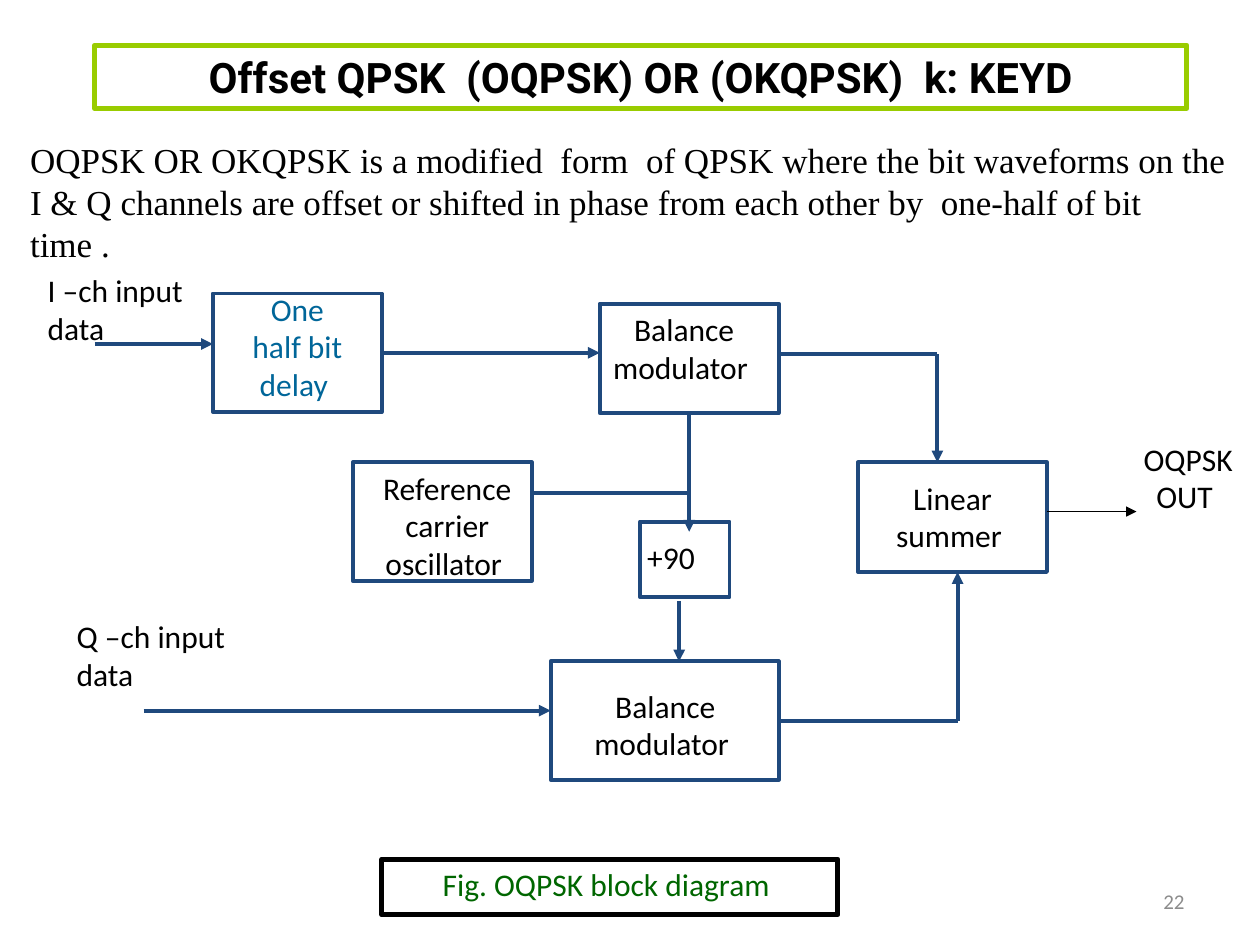
from dataclasses import dataclass

from lxml.etree import SubElement
from pptx import Presentation
from pptx.dml.color import RGBColor
from pptx.enum.shapes import MSO_CONNECTOR, MSO_SHAPE
from pptx.enum.text import MSO_ANCHOR, MSO_AUTO_SIZE, PP_ALIGN
from pptx.oxml.ns import qn
from pptx.util import Inches, Pt

COLOURS = {
    "navy": "1F497D", "white": "FFFFFF", "black": "000000", "lime": "99CC00",
    "teal": "006699", "green": "006600", "grey": "8C8C8C",
}
TOP, LEFT, BOTTOM, RIGHT = range(4)


def colour(name):
    return RGBColor.from_string(COLOURS[name])


@dataclass
class DiagramPage:
    """Draws the boxes, wires and labels of a block diagram on one slide."""

    page: object
    font: str = "Calibri"
    size: float = 18
    weight: float = 2.25

    def set_text(self, shape, text, ink="black", size=None, font=None, bold=False,
                 align=PP_ALIGN.CENTER, anchor=MSO_ANCHOR.TOP, grow=True):
        frame = shape.text_frame
        frame.word_wrap = True
        frame.vertical_anchor = anchor
        frame.auto_size = MSO_AUTO_SIZE.SHAPE_TO_FIT_TEXT if grow else MSO_AUTO_SIZE.NONE
        para = frame.paragraphs[0]
        para.text = text
        para.alignment = align
        para.font.name = font or self.font
        para.font.size = Pt(size or self.size)
        para.font.bold = bold
        para.font.color.rgb = colour(ink)

    def label(self, place, text, **style):
        box = self.page.shapes.add_textbox(*map(Inches, place))
        self.set_text(box, text, **style)
        return box

    def box(self, place, line="navy", weight=None, fill=None):
        box = self.page.shapes.add_shape(MSO_SHAPE.RECTANGLE, *map(Inches, place))
        box.shadow.inherit = False
        if fill:
            box.fill.solid()
            box.fill.fore_color.rgb = colour(fill)
        else:
            box.fill.background()
        box.line.color.rgb = colour(line)
        box.line.width = Pt(weight or self.weight)
        return box

    def frame(self, place, text, line, **style):
        self.set_text(self.box(place, line, 3), text, **style)

    def wire(self, start, end, arrow=True, source=None, side=RIGHT, line="navy", weight=None):
        wire = self.page.shapes.add_connector(
            MSO_CONNECTOR.STRAIGHT, *map(Inches, (*start, *end)))
        if source:
            wire.begin_connect(source, side)
        wire.line.color.rgb = colour(line)
        wire.line.width = Pt(weight or self.weight)
        properties = wire.element.spPr
        if arrow:
            SubElement(properties.find(qn("a:ln")), qn("a:tailEnd"), type="triangle")
        SubElement(properties, qn("a:effectLst"))


def main():
    deck = Presentation()
    deck.slide_width, deck.slide_height = Inches(10), Inches(7.5)
    diagram = DiagramPage(deck.slides.add_slide(deck.slide_layouts[6]))

    diagram.frame((0.75, 0.36, 8.67, 0.5), "Offset QPSK  (OQPSK) OR (OKQPSK)  k: KEYD",
                  "lime", size=24, font="Roboto", bold=True)

    blocks = {
        "shifter": (5.08, 4.14, 0.71, 0.6),
        "oscillator": (2.8, 3.67, 1.42, 0.94),
        "lower modulator": (4.37, 5.25, 1.81, 0.94),
        "summer": (6.81, 3.67, 1.5, 0.87),
        "upper modulator": (4.76, 2.41, 1.42, 0.87),
        "delay": (1.69, 2.33, 1.34, 0.94),
    }
    boxes = {name: diagram.box(place, fill="white") for name, place in blocks.items()}

    diagram.wire((0.75, 2.73), (1.69, 2.73))
    diagram.wire((1.14, 5.64), (4.37, 5.64))
    diagram.wire((6.18, 2.81), (7.44, 2.81), arrow=False)
    diagram.wire((7.44, 2.81), (7.44, 3.67))
    diagram.wire((6.18, 5.72), (7.6, 5.72), arrow=False, source=boxes["lower modulator"])
    diagram.wire((7.6, 5.72), (7.6, 4.54))
    diagram.wire((5.39, 4.77), (5.39, 5.25))
    diagram.wire((5.47, 3.28), (5.47, 4.22), source=boxes["upper modulator"], side=BOTTOM)
    diagram.wire((4.21, 3.91), (5.47, 3.91), arrow=False)
    diagram.wire((3.03, 2.8), (4.76, 2.8), source=boxes["delay"])
    diagram.wire((8.31, 4.06), (9.02, 4.06), line="black", weight=0.75)

    diagram.label((1.85, 2.25, 1.02, 1), "One half bit delay ", ink="teal")
    for place, text in (
        ((2.8, 3.67, 1.5, 1), "Reference carrier oscillator "),
        ((4.76, 2.41, 1.34, 0.7), "Balance modulator "),
        ((4.61, 5.4, 1.34, 0.7), "Balance modulator "),
        ((6.97, 3.75, 1.18, 0.7), "Linear summer "),
        ((8.86, 3.44, 1.14, 0.7), "OQPSK OUT "),
    ):
        diagram.label(place, text)
    phase = diagram.label((4.84, 4.22, 0.87, 0.4), "+90")
    phase.text_frame.margin_left = Inches(0.2)

    diagram.frame((3.03, 6.82, 3.62, 0.44), "Fig. OQPSK block diagram ", "black", ink="green")
    diagram.label((0.28, 2.1, 1.34, 0.57), "I –ch input data", align=PP_ALIGN.LEFT)
    diagram.label((0.51, 4.85, 1.69, 0.57), "Q –ch input data", align=PP_ALIGN.LEFT)
    diagram.label(
        (0.14, 1.05, 9.72, 0.77),
        "OQPSK OR OKQPSK is a modified  form  of QPSK where the bit waveforms on the "
        "I & Q channels are offset or shifted in phase from each other by  one-half of bit time .",
        size=20, font="Times New Roman", align=PP_ALIGN.LEFT)
    diagram.label((7.17, 6.95, 2.33, 0.4), "22", ink="grey", size=12,
                  align=PP_ALIGN.RIGHT, anchor=MSO_ANCHOR.MIDDLE, grow=False)

    deck.save("out.pptx")


if __name__ == "__main__":
    main()
